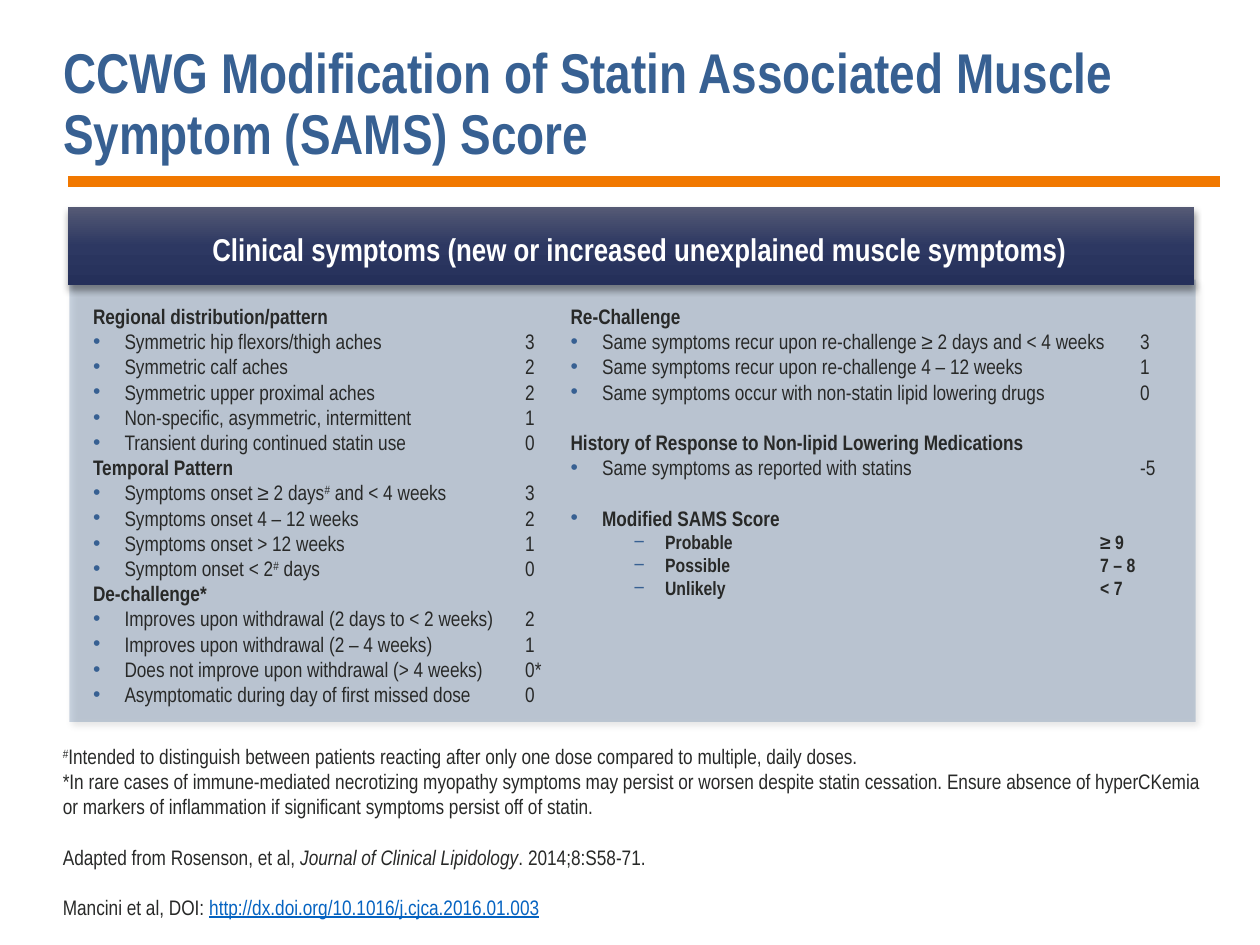
import copy
from dataclasses import dataclass, field

import pptx
import pptx.dml.color
import pptx.enum.shapes
import pptx.enum.text
import pptx.oxml
import pptx.oxml.ns
import pptx.util
from pptx.util import Inches

BLUE, DARK, ORANGE, WHITE, LINK = "376092", "282928", "F17800", "FFFFFF", "0563C1"
FONT = "Arial Narrow"
BLANK_LINE = 14.4
LEFT_TAB, RIGHT_TAB = 3.43, 4.52
ANCHOR = pptx.enum.text.MSO_ANCHOR
ALIGN = pptx.enum.text.PP_ALIGN


@dataclass
class Run:
    text: str
    format: dict = field(default_factory=dict)
    color: str = DARK
    raised: bool = False


@dataclass
class Line:
    runs: list[Run]
    bullet: str = ""
    indent: float = 0.25
    tab: float = 0
    level: int = 0
    format: dict = field(default_factory=dict)


def rgb(color: str) -> pptx.dml.color.RGBColor:
    return pptx.dml.color.RGBColor.from_string(color)


def add_xml(parent, tag: str, **attributes):
    child = pptx.oxml.parse_xml(f"<a:{tag} {pptx.oxml.ns.nsdecls('a')}/>")
    for name, value in attributes.items():
        child.set(name, str(value))
    parent.append(child)
    return child


def heading(text: str, blank_before: bool = False) -> Line:
    spacing = {"space_before": pptx.util.Pt(BLANK_LINE)} if blank_before else {}
    return Line([Run(text, {"bold": True})], format=spacing)


def item(text: str, score: str, tab: float) -> Line:
    """A bulleted symptom with its score; each # in the text is raised."""
    runs = []
    for index, part in enumerate(f"{text}\t{score}".split("#")):
        if index:
            runs.append(Run("#", raised=True))
        runs.append(Run(part))
    return Line(runs, "•", tab=tab)


def grade(text: str, score: str) -> Line:
    style = {"bold": True, "size": pptx.util.Pt(11)}
    return Line([Run(f"{text}\t{score}", style)], "−", 0.75, RIGHT_TAB, 1)


def write_lines(frame, lines: list[Line]) -> None:
    for index, line in enumerate(lines):
        paragraph = frame.paragraphs[0] if index == 0 else frame.add_paragraph()
        paragraph.level = line.level
        for name, value in line.format.items():
            setattr(paragraph, name, value)
        if line.bullet:
            properties = paragraph._p.get_or_add_pPr()
            properties.set("marL", str(Inches(line.indent)))
            properties.set("indent", str(Inches(-0.25)))
            add_xml(add_xml(properties, "buClr"), "srgbClr", val=BLUE)
            add_xml(properties, "buFont", typeface="Arial")
            add_xml(properties, "buChar", char=line.bullet)
            if line.tab:
                add_xml(add_xml(properties, "tabLst"), "tab", pos=Inches(line.tab), algn="l")
        for part in line.runs:
            run = paragraph.add_run()
            run.text = part.text
            style = {"name": FONT, "size": pptx.util.Pt(12), **part.format}
            for name, value in style.items():
                setattr(run.font, name, value)
            run.font.color.rgb = rgb(part.color)
            if part.raised:
                run._r.get_or_add_rPr().set("baseline", "30000")


def add_text(slide, box: tuple, lines: list[Line], anchor=ANCHOR.TOP) -> None:
    frame = slide.shapes.add_textbox(*map(Inches, box)).text_frame
    frame.word_wrap = True
    frame.vertical_anchor = anchor
    write_lines(frame, lines)


def add_panel(slide, box: tuple, shadow_angle: int):
    shape = slide.shapes.add_shape(
        pptx.enum.shapes.MSO_SHAPE.RECTANGLE, *map(Inches, box))
    shape.line.fill.background()
    shape.shadow.inherit = False
    effects = shape._element.spPr.find(pptx.oxml.ns.qn("a:effectLst"))
    shadow = add_xml(effects, "outerShdw", blurRad=pptx.util.Pt(4), dist=pptx.util.Pt(3),
                     dir=shadow_angle * 60000, algn="tl", rotWithShape=0)
    add_xml(add_xml(shadow, "srgbClr", val="000000"), "alpha", val=40000)
    return shape


def fill_gradient(shape, stops: list[tuple[float, str]]) -> None:
    shape.fill.gradient()
    shape.fill.gradient_angle = 270
    stop_list = shape._element.spPr.find(".//" + pptx.oxml.ns.qn("a:gsLst"))
    while len(stop_list) < len(stops):
        stop_list.append(copy.deepcopy(stop_list[0]))
    for stop, (position, color) in zip(shape.fill.gradient_stops, stops):
        stop.position = position
        stop.color.rgb = rgb(color)


def add_title(slide, text: str) -> None:
    title = slide.shapes.title
    title.left, title.top, title.width, title.height = map(Inches, (0.4, 0.4, 9.28, 0.97))
    frame = title.text_frame
    frame.auto_size = pptx.enum.text.MSO_AUTO_SIZE.NONE
    frame.vertical_anchor = ANCHOR.BOTTOM
    write_lines(frame, [Line([Run(text, {"size": pptx.util.Pt(32), "bold": True}, BLUE)],
                             format={"alignment": ALIGN.LEFT, "line_spacing": 0.9})])


def add_rule(slide) -> None:
    rule = slide.shapes.add_connector(
        pptx.enum.shapes.MSO_CONNECTOR.STRAIGHT, *map(Inches, (0.54, 1.44, 9.68, 1.44)))
    rule.line.color.rgb = rgb(ORANGE)
    rule.line.width = pptx.util.Pt(6)
    add_xml(rule._element.spPr, "effectLst")


LEFT_GROUPS = {
    "Regional distribution/pattern": [
        ("Symmetric hip flexors/thigh aches", "3"),
        ("Symmetric calf aches", "2"),
        ("Symmetric upper proximal aches", "2"),
        ("Non-specific, asymmetric, intermittent", "1"),
        ("Transient during continued statin use", "0")],
    "Temporal Pattern": [
        ("Symptoms onset ≥ 2 days# and < 4 weeks", "3"),
        ("Symptoms onset 4 – 12 weeks", "2"),
        ("Symptoms onset > 12 weeks", "1"),
        ("Symptom onset < 2# days", "0")],
    "De-challenge*": [
        ("Improves upon withdrawal (2 days to < 2 weeks)", "2"),
        ("Improves upon withdrawal (2 – 4 weeks)", "1"),
        ("Does not improve upon withdrawal (> 4 weeks)", "0*"),
        ("Asymptomatic during day of first missed dose", "0")],
}
RIGHT_GROUPS = {
    "Re-Challenge": [
        ("Same symptoms recur upon re-challenge ≥ 2 days and < 4 weeks", "3"),
        ("Same symptoms recur upon re-challenge 4 – 12 weeks", "1"),
        ("Same symptoms occur with non-statin lipid lowering drugs", "0")],
    "History of Response to Non-lipid Lowering Medications": [
        ("Same symptoms as reported with statins", "-5")],
}
GRADES = [("Probable", "≥ 9"), ("Possible", "7 – 8"), ("Unlikely", "< 7")]


def group_lines(groups: dict, tab: float, spaced: bool = False) -> list[Line]:
    lines = []
    for name, items in groups.items():
        lines.append(heading(name, spaced and bool(lines)))
        lines += [item(text, score, tab) for text, score in items]
    return lines


def main() -> None:
    presentation = pptx.Presentation()
    presentation.slide_width, presentation.slide_height = Inches(10), Inches(7.5)
    slide = presentation.slides.add_slide(presentation.slide_layouts[5])
    add_rule(slide)
    add_title(slide, "CCWG Modification of Statin Associated Muscle Symptom (SAMS) Score")

    gap = {"space_before": pptx.util.Pt(BLANK_LINE)}
    add_text(slide, (0.4, 6.95, 9.28, 0.4), [
        Line([Run("#", raised=True),
              Run("Intended to distinguish between patients reacting after only one dose "
                  "compared to multiple, daily doses.")]),
        Line([Run("*In rare cases of immune-mediated necrotizing myopathy symptoms may persist "
                  "or worsen despite statin cessation. Ensure absence of hyperCKemia or markers "
                  "of inflammation if significant symptoms persist off of statin.")]),
        Line([Run("Adapted from Rosenson, et al, "),
              Run("Journal of Clinical Lipidology", {"italic": True}),
              Run(". 2014;8:S58-71.")], format=gap),
        Line([Run("Mancini et al, DOI: "),
              Run("http://dx.doi.org/10.1016/j.cjca.2016.01.003", {"underline": True}, LINK)],
             format=gap),
    ], ANCHOR.BOTTOM)

    body = add_panel(slide, (0.55, 2.22, 8.94, 3.51), 45)
    body.fill.solid()
    body.fill.fore_color.rgb = rgb(BLUE)
    body_color = body._element.spPr.find(".//" + pptx.oxml.ns.qn("a:srgbClr"))
    add_xml(body_color, "alpha", val=25000)
    add_text(slide, (0.64, 2.36, 4.26, 3.27), group_lines(LEFT_GROUPS, LEFT_TAB))

    banner = add_panel(slide, (0.54, 1.64, 8.94, 0.62), 90)
    fill_gradient(banner, [(0, "555A75"), (0.5, "2D3862"), (1, "25305A")])
    caption = Run("Clinical symptoms (new or increased unexplained muscle symptoms)",
                  {"size": pptx.util.Pt(18), "bold": True}, WHITE)
    add_text(slide, (0.64, 1.73, 8.87, 0.42), [Line([caption], format={
        "alignment": ALIGN.CENTER, "line_spacing": 1.15, "space_after": pptx.util.Pt(6)})])

    score = heading("Modified SAMS Score", True)
    score.bullet = "•"
    add_text(slide, (4.43, 2.36, 5.15, 3.27), [
        *group_lines(RIGHT_GROUPS, RIGHT_TAB, True), score,
        *[grade(*row) for row in GRADES]])
    presentation.save("out.pptx")


if __name__ == "__main__":
    main()
